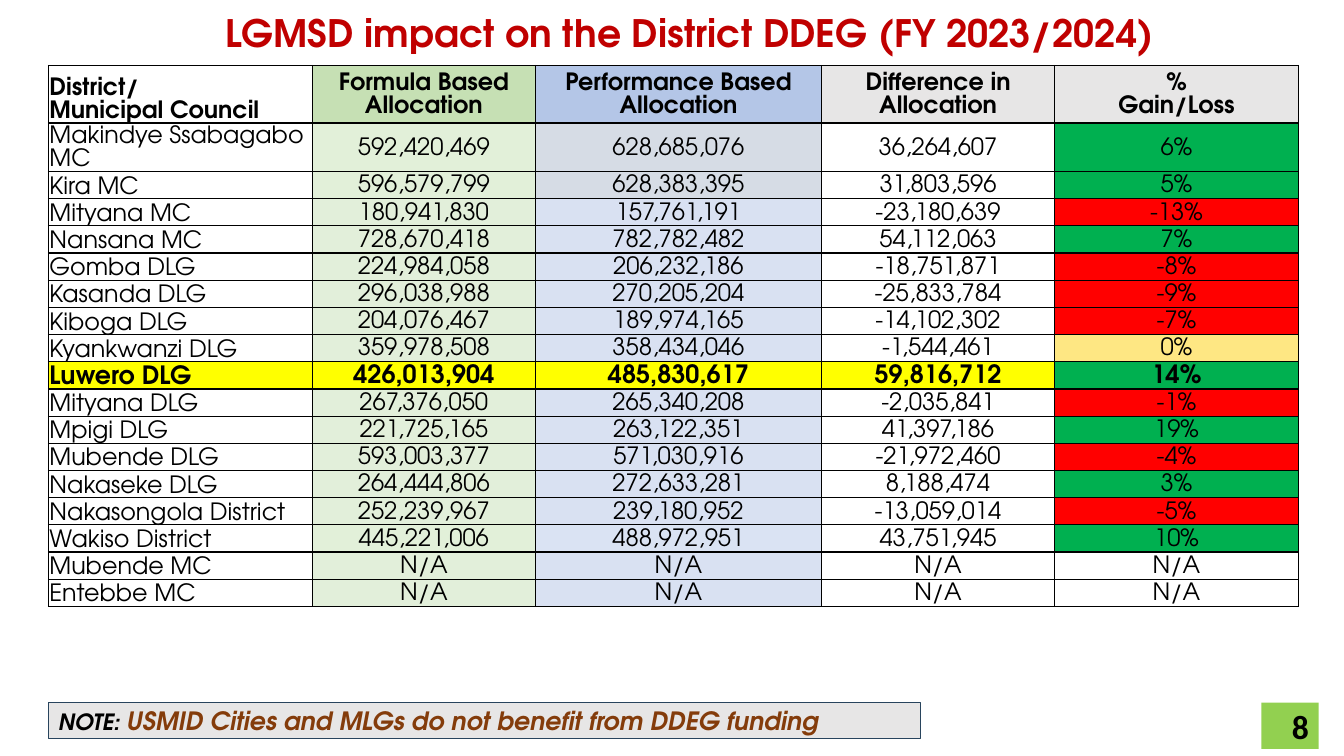
from dataclasses import dataclass

from lxml import etree
from pptx import Presentation
from pptx.dml.color import RGBColor
from pptx.enum.shapes import MSO_SHAPE
from pptx.enum.text import MSO_ANCHOR, PP_ALIGN
from pptx.oxml.ns import qn
from pptx.util import Pt

RECT = MSO_SHAPE.RECTANGLE
MIDDLE, BOTTOM = MSO_ANCHOR.MIDDLE, MSO_ANCHOR.BOTTOM
LEFT, CENTER, RIGHT = PP_ALIGN.LEFT, PP_ALIGN.CENTER, PP_ALIGN.RIGHT
SCALE = 9144  # EMU in one px, 100 px to the inch


@dataclass(frozen=True)
class Theme:
    face: str = "TeX Gyre Adventor"
    digit: str = "Calibri"
    black: str = "000000"
    title: str = "C00000"
    note: str = "843C0B"
    edge: str = "28445D"
    gray: str = "E7E6E6"
    lime: str = "92D050"
    heads: tuple = (None, "C6E0B4", "B4C6E7", "E7E6E6", "E7E6E6")
    tints: tuple = ("E2EFDA", "D9E1F2")
    top_tints: tuple = ("E2F0D9", "D6DCE5")
    end_tints: tuple = ("E2F0D9", "DAE3F3")
    yellow: str = "FFFF00"
    gain: str = "00B050"
    loss: str = "FF0000"
    even: str = "FEE783"
    title_size: int = 27
    page_size: int = 24
    large: int = 18
    body: int = 17
    label: int = 16


THEME = Theme()
FOCUS = "Luwero DLG"
HEADS = ("District/\nMunicipal Council", "Formula Based Allocation",
         "Performance Based Allocation", "Difference in Allocation",
         "%\nGain/Loss")
ROWS = (
    ("Makindye Ssabagabo MC", "592,420,469", "628,685,076", "36,264,607", "6%"),
    ("Kira MC", "596,579,799", "628,383,395", "31,803,596", "5%"),
    ("Mityana MC", "180,941,830", "157,761,191", "-23,180,639", "-13%"),
    ("Nansana MC", "728,670,418", "782,782,482", "54,112,063", "7%"),
    ("Gomba DLG", "224,984,058", "206,232,186", "-18,751,871", "-8%"),
    ("Kasanda DLG", "296,038,988", "270,205,204", "-25,833,784", "-9%"),
    ("Kiboga DLG", "204,076,467", "189,974,165", "-14,102,302", "-7%"),
    ("Kyankwanzi DLG", "359,978,508", "358,434,046", "-1,544,461", "0%"),
    (FOCUS, "426,013,904", "485,830,617", "59,816,712", "14%"),
    ("Mityana DLG", "267,376,050", "265,340,208", "-2,035,841", "-1%"),
    ("Mpigi DLG", "221,725,165", "263,122,351", "41,397,186", "19%"),
    ("Mubende DLG", "593,003,377", "571,030,916", "-21,972,460", "-4%"),
    ("Nakaseke DLG", "264,444,806", "272,633,281", "8,188,474", "3%"),
    ("Nakasongola District", "252,239,967", "239,180,952", "-13,059,014", "-5%"),
    ("Wakiso District", "445,221,006", "488,972,951", "43,751,945", "10%"),
    ("Mubende MC", "N/A", "N/A", "N/A", "N/A"),
    ("Entebbe MC", "N/A", "N/A", "N/A", "N/A"),
)
TINTS = {"Makindye Ssabagabo MC": THEME.top_tints, "Kira MC": THEME.top_tints,
         "Wakiso District": THEME.end_tints}
WIDTHS = (262, 221, 284, 231, 242)
HEIGHTS = (57, 48) + (27,) * (len(ROWS) - 1)


def px(count):
    return count * SCALE


def rate_fill(rate):
    if rate == "N/A":
        return None
    value = int(rate.rstrip("%"))
    if value == 0:
        return THEME.even
    return THEME.gain if value > 0 else THEME.loss


def row_fills(row):
    if row[0] == FOCUS:
        return (THEME.yellow,) * 4 + (rate_fill(row[4]),)
    return (None, *TINTS.get(row[0], THEME.tints), None, rate_fill(row[4]))


class Board:
    def __init__(self, deck, theme):
        self.theme = theme
        self.slide = deck.slides.add_slide(deck.slide_layouts[5])

    def style(self, font, size, color, bold=True, italic=False, face=None):
        font.name = face or self.theme.face
        font.size = Pt(size)
        font.bold, font.italic = bold, italic
        font.color.rgb = RGBColor.from_string(color)

    def paint(self, item, color):
        if color is None:
            item.fill.background()
        else:
            item.fill.solid()
            item.fill.fore_color.rgb = RGBColor.from_string(color)

    def title(self, text, x, y, w, h, inset):
        shape = self.slide.shapes.title
        shape.left, shape.top, shape.width, shape.height = map(px, (x, y, w, h))
        frame = shape.text_frame
        frame.text = text
        frame.vertical_anchor = MIDDLE
        frame.margin_left = px(inset)
        para = frame.paragraphs[0]
        para.alignment, para.line_spacing = LEFT, 0.9
        self.style(para.font, self.theme.title_size, self.theme.title)

    def box(self, x, y, w, h, fill, edge=None, align=LEFT):
        shape = self.slide.shapes.add_shape(RECT, *map(px, (x, y, w, h)))
        shape.shadow.inherit = False
        self.paint(shape, fill)
        if edge:
            shape.line.color.rgb = RGBColor.from_string(edge)
            shape.line.width = Pt(1)
        else:
            shape.line.fill.background()
        shape.text_frame.word_wrap = True
        shape.text_frame.vertical_anchor = MIDDLE
        para = shape.text_frame.paragraphs[0]
        para.alignment = align
        return para

    def page(self, text, *place):
        para = self.box(*place, self.theme.lime, align=RIGHT)
        para.text = text
        self.style(para.font, self.theme.page_size, self.theme.black,
                   face=self.theme.digit)

    def note(self, label, text, *place):
        look = self.theme
        para = self.box(*place, look.gray, look.edge)
        for words, size, color in ((label, look.label, look.black),
                                   (text, look.large, look.note)):
            run = para.add_run()
            run.text = words
            self.style(run.font, size, color, italic=True)

    def border(self, cell):
        props = cell._tc.get_or_add_tcPr()
        for side in ("lnL", "lnR", "lnT", "lnB"):
            line = etree.SubElement(props, qn("a:" + side), w=str(Pt(1)))
            fill = etree.SubElement(line, qn("a:solidFill"))
            etree.SubElement(fill, qn("a:srgbClr"), val=self.theme.black)

    def cell(self, cell, text, fill, first, size, bold):
        cell.text = text
        cell.margin_left = cell.margin_right = cell.margin_top = px(1)
        cell.margin_bottom = 0
        cell.vertical_anchor = BOTTOM if first else MIDDLE
        for para in cell.text_frame.paragraphs:
            para.alignment = LEFT if first else CENTER
            para.line_spacing = 1.07
            self.style(para.font, size, self.theme.black, bold)
        self.border(cell)
        self.paint(cell, fill)

    def table(self, x, y):
        place = map(px, (x, y, sum(WIDTHS), sum(HEIGHTS)))
        grid = self.slide.shapes.add_table(
            len(HEIGHTS), len(WIDTHS), *place).table
        grid.first_row = grid.horz_banding = False
        for col, width in zip(grid.columns, WIDTHS):
            col.width = px(width)
        for line, height in zip(grid.rows, HEIGHTS):
            line.height = px(height)
        for r, row in enumerate((HEADS, *ROWS)):
            focus = row[0] == FOCUS
            size = self.theme.large if focus else self.theme.body
            fills = row_fills(row) if r else self.theme.heads
            for c, (text, fill) in enumerate(zip(row, fills)):
                self.cell(grid.cell(r, c), text, fill, c == 0, size,
                          focus or r == 0)


def main():
    deck = Presentation()
    deck.slide_width, deck.slide_height = px(1333), px(750)
    board = Board(deck, THEME)
    # Heading
    board.title("LGMSD impact on the District DDEG (FY 2023/2024)",
                152, 11, 1109, 47, 72)
    # Page number and footnote
    board.page("8", 1251, 697, 57, 46)
    board.note("NOTE: ", "USMID Cities and MLGs do not benefit from DDEG funding",
               48, 697, 865, 36)
    # Allocation table
    board.table(48, 65)
    deck.save("out.pptx")


if __name__ == "__main__":
    main()
